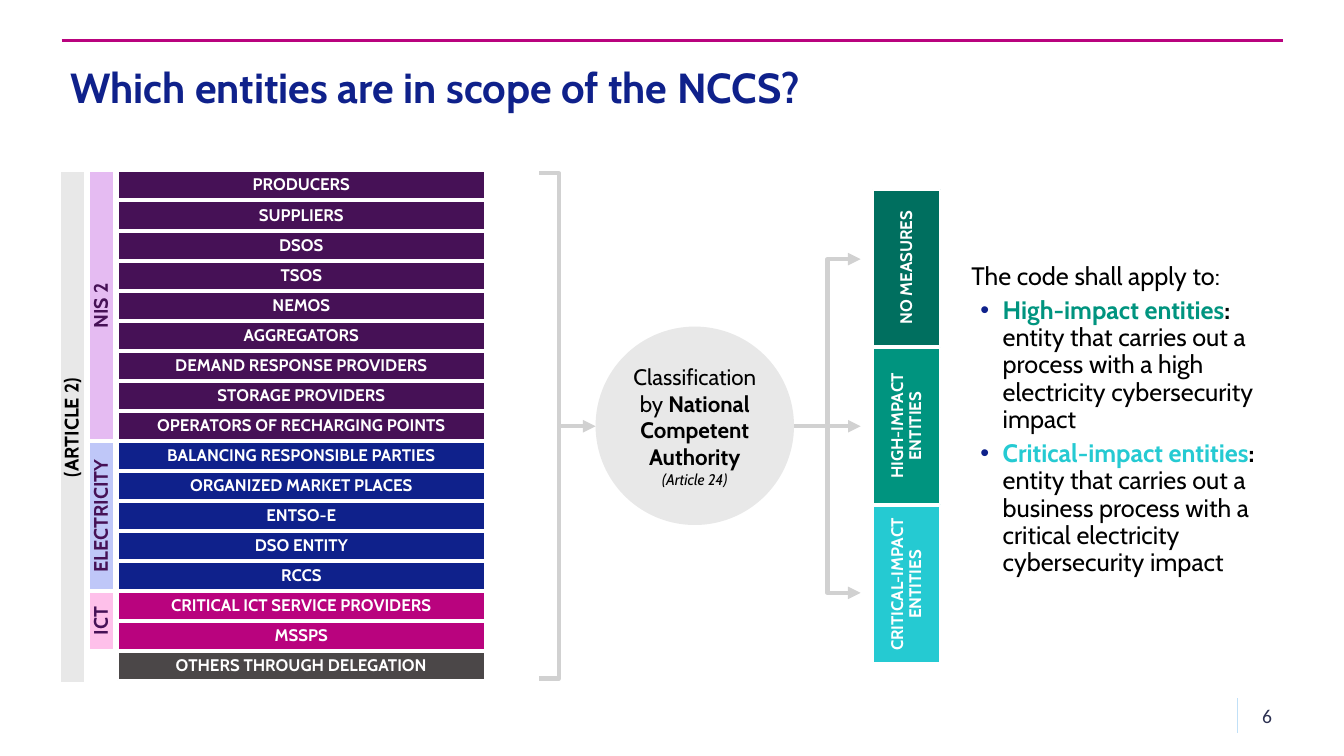
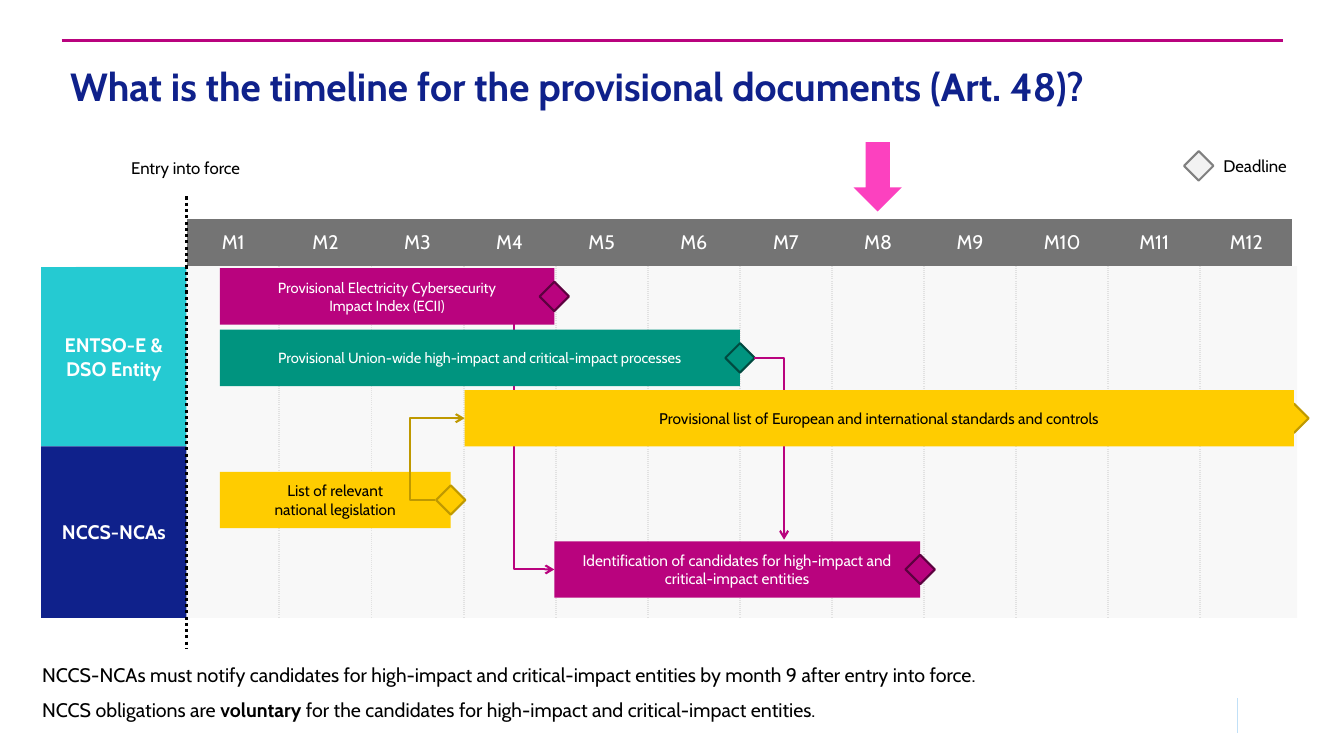
import pptx
import pptx.dml.color
import pptx.enum.dml
import pptx.enum.shapes
import pptx.enum.text
import pptx.oxml.ns
import pptx.util
from lxml import etree

FONT = "Cabin"
COLORS = {
    "white": "FFFFFF", "black": "000000", "navy": "0F218B", "magenta": "B9037E",
    "purple": "461156", "charcoal": "4B4748", "lilac": "E5BBF2", "periwinkle": "BFC7F8",
    "rose": "FEC0EA", "light": "E8E8E8", "silver": "D1D1D1", "forest": "006F5F",
    "green": "00947F", "cyan": "25CAD2", "sky": "C1E0F7", "ink": "2C3051",
    "header": "747474", "panel": "F2F2F2", "yellow": "FFCC00", "gold": "BF9900",
    "wine": "5C013F", "pine": "004A40", "gray": "808080", "pink": "FC41BF",
}
SHAPE = pptx.enum.shapes.MSO_SHAPE
CONNECTOR = pptx.enum.shapes.MSO_CONNECTOR
ALIGN = pptx.enum.text.PP_ALIGN
ANCHOR = pptx.enum.text.MSO_ANCHOR
DOTTED = pptx.enum.dml.MSO_LINE.ROUND_DOT
qn = pptx.oxml.ns.qn

ENTITY_GROUPS = [
    ("NIS 2", "lilac", "purple", [
        "PRODUCERS", "SUPPLIERS", "DSOS", "TSOS", "NEMOS", "AGGREGATORS",
        "DEMAND RESPONSE PROVIDERS", "STORAGE PROVIDERS", "OPERATORS OF RECHARGING POINTS"]),
    ("ELECTRICITY", "periwinkle", "navy", [
        "BALANCING RESPONSIBLE PARTIES", "ORGANIZED MARKET PLACES", "ENTSO-E",
        "DSO ENTITY", "RCCS"]),
    ("ICT", "rose", "magenta", ["CRITICAL ICT SERVICE PROVIDERS", "MSSPS"]),
    (None, None, "charcoal", ["OTHERS THROUGH DELEGATION"]),
]
OUTCOMES = [("NO MEASURES", "forest"), ("HIGH-IMPACT ENTITIES", "green"),
            ("CRITICAL-IMPACT ENTITIES", "cyan")]
BAR_HEIGHT = 1.42
BARS = [
    (5.54, 6.76, 8.43, "magenta", "wine", "white", 10.5,
     [["Provisional Electricity Cybersecurity"], ["Impact Index (ECII)"]]),
    (5.54, 8.31, 13.11, "green", "pine", "white", 10.5,
     [["Provisional Union-wide high-impact and critical-impact processes"]]),
    (13.97, 13.64, 9.22, "magenta", "wine", "white", 11,
     [["Identification of candidates for high-impact and critical-impact entities"]]),
    (5.54, 11.89, 5.82, "yellow", "gold", "black", 11,
     [["List of relevant"], ["national legislation"]]),
    (11.71, 9.83, 20.9, "yellow", "gold", "black", 11,
     [["Provisional list of European and international standards and controls"]]),
]


def rgb(name):
    return pptx.dml.color.RGBColor.from_string(COLORS[name])


def cm(*lengths):
    return [pptx.util.Cm(length) for length in lengths]


def write(shape, paragraphs, size, color="black", align=ALIGN.LEFT, anchor=ANCHOR.TOP,
          bold=False, inset=None, spacing=1.0, before=0, vertical=False, wrap=True, font=FONT):
    frame = shape.text_frame
    frame.word_wrap = wrap
    frame.vertical_anchor = anchor
    if inset is not None:
        frame.margin_left = frame.margin_right = pptx.util.Cm(inset)
        frame.margin_top = frame.margin_bottom = pptx.util.Cm(inset)
    if vertical:
        frame._txBody.bodyPr.set("vert", "vert270")
    for index, runs in enumerate(paragraphs):
        para = frame.add_paragraph() if index else frame.paragraphs[0]
        para.alignment = align
        para.line_spacing = spacing
        para.space_before = pptx.util.Pt(before if index else 0)
        for run in runs:
            text, changes = (run, {}) if isinstance(run, str) else run
            if text == "\n":
                para.add_line_break()
                continue
            span = para.add_run()
            span.text = text
            span.font.name = font
            span.font.size = pptx.util.Pt(changes.get("size", size))
            span.font.bold = changes.get("bold", bold)
            span.font.italic = changes.get("italic", False)
            span.font.color.rgb = rgb(changes.get("color", color))
    return frame


def add_text(page, place, paragraphs, size, **style):
    box = page.shapes.add_textbox(*cm(*place))
    return write(box, paragraphs, size, **style)


def add_box(page, kind, place, fill=None, line=None, width=1.5):
    shape = page.shapes.add_shape(kind, *cm(*place))
    shape.shadow.inherit = False
    if fill:
        shape.fill.solid()
        shape.fill.fore_color.rgb = rgb(fill)
    else:
        shape.fill.background()
    if line:
        shape.line.color.rgb = rgb(line)
        shape.line.width = pptx.util.Pt(width)
    else:
        shape.line.fill.background()
    return shape


def add_label(page, place, text, fill, size, color="white", vertical=False):
    box = add_box(page, SHAPE.RECTANGLE, place, fill, "white")
    write(box, [[text]], size, color, ALIGN.CENTER, ANCHOR.MIDDLE, True,
          inset=0.16, spacing=0.9, vertical=vertical)


def add_line_end(shape, end, kind):
    etree.SubElement(shape.element.spPr.find(qn("a:ln")), qn(f"a:{end}"), type=kind)


def add_line(page, ends, color, width, arrow=None, kind=CONNECTOR.STRAIGHT, dash=None):
    line = page.shapes.add_connector(kind, *cm(*ends))
    line.line.color.rgb = rgb(color)
    line.line.width = pptx.util.Pt(width)
    if dash:
        line.line.dash_style = dash
    if arrow:
        add_line_end(line, "tailEnd", arrow)
    etree.SubElement(line.element.spPr, qn("a:effectLst"))
    return line


def add_elbow(page, ends, color, via=None):
    line = add_line(page, ends, color, 1.5, "arrow", CONNECTOR.ELBOW)
    geometry = line.element.spPr.find(qn("a:prstGeom"))
    if via is None:
        geometry.set("prst", "bentConnector2")
        return
    guides = geometry.find(qn("a:avLst"))
    if guides is None:
        guides = etree.SubElement(geometry, qn("a:avLst"))
    share = round((via - ends[0]) / (ends[2] - ends[0]) * 100000)
    etree.SubElement(guides, qn("a:gd"), name="adj1", fmla=f"val {share}")


def add_bracket(page, place):
    bracket = add_box(page, SHAPE.RIGHT_BRACE, place, None, "silver", 3)
    bracket.adjustments[0] = 0
    bracket.adjustments[1] = 0.5
    return bracket


def add_bullet(para):
    properties = para._p.get_or_add_pPr()
    properties.set("marL", str(pptx.util.Cm(0.79)))
    properties.set("indent", str(pptx.util.Cm(-0.56)))
    tint = etree.SubElement(properties, qn("a:buClr"))
    etree.SubElement(tint, qn("a:srgbClr"), val=COLORS["navy"])
    etree.SubElement(properties, qn("a:buFont"), typeface="Arial")
    etree.SubElement(properties, qn("a:buChar"), char="•")


def add_page(deck, title, size):
    page = deck.slides.add_slide(deck.slide_layouts[6])
    add_line(page, (31.19, 17.6, 31.19, 18.47), "sky", 1)
    add_line(page, (1.55, 1.02, 32.33, 1.02), "magenta", 1.5)
    add_text(page, (1.52, 1.57, 30.81, 2.26), [[title]], size, color="navy",
             bold=True, spacing=0.9)
    return page


def add_entities(page):
    top, step = 4.32, 12.11 / 16
    add_label(page, (1.5, top, 0.64, 12.9), "(ARTICLE 2)", "light", 14, "black", True)
    for group, tint, fill, names in ENTITY_GROUPS:
        if group:
            add_label(page, (2.24, top, 0.64, len(names) * step - 0.05), group, tint, 14,
                      "purple", True)
        for name in names:
            add_label(page, (2.97, top, 9.25, 0.71), name, fill, 12)
            top += step


def add_scope_page(deck):
    page = add_page(deck, "Which entities are in scope of the NCCS?", 30)
    entity = "entity that carries out a "
    points = [
        ("High-impact entities", "green",
         entity + "process with a high electricity cybersecurity impact"),
        ("Critical-impact entities", "cyan",
         entity + "business process with a critical electricity cybersecurity impact"),
    ]
    paragraphs = [["The code shall apply to:"]]
    for name, color, meaning in points:
        paragraphs.append([(name, {"color": color, "bold": True}), (":", {"bold": True}),
                           "\n", meaning])
    frame = add_text(page, (24.23, 4.42, 8.28, 12.34), paragraphs, 18, anchor=ANCHOR.MIDDLE,
                     spacing=0.9, before=5)
    for para in frame.paragraphs[1:]:
        add_bullet(para)

    add_entities(page)
    add_bracket(page, (13.59, 4.37, 0.99, 12.73))
    for start, end in ((14.3, 15.01), (20.24, 21.69)):
        add_line(page, (start, 10.74, end, 10.74), "silver", 3, "triangle")
    fork = add_bracket(page, (20.02, 6.53, 1.67, 8.41))
    fork.element.spPr.find(qn("a:xfrm")).set("flipH", "1")
    for end in ("headEnd", "tailEnd"):
        add_line_end(fork, end, "triangle")

    circle = add_box(page, SHAPE.OVAL, (15.01, 8.23, 5, 5), "light")
    strong = {"bold": True}
    write(circle, [["Classification"], ["by ", ("National", strong)], [("Competent", strong)],
                   [("Authority", strong)], [("(Article 24)", {"size": 11, "italic": True})]],
          16, align=ALIGN.CENTER, anchor=ANCHOR.MIDDLE, wrap=False)
    for index, (name, fill) in enumerate(OUTCOMES):
        add_label(page, (22, 4.78 + 3.99 * index, 1.7, 3.94), name, fill, 12, vertical=True)
    add_text(page, (31.19, 17.53, 1.12, 1.02), [["6"]], 14, color="ink", align=ALIGN.RIGHT,
             anchor=ANCHOR.MIDDLE, font="Calibri")


def add_cell_border(cell, side):
    border = etree.SubElement(cell._tc.get_or_add_tcPr(), qn(f"a:{side}"),
                              w=str(pptx.util.Pt(1.5)))
    fill = etree.SubElement(border, qn("a:solidFill"))
    etree.SubElement(fill, qn("a:srgbClr"), val=COLORS["silver"])
    etree.SubElement(border, qn("a:prstDash"), val="sysDot")


def add_months(page, count=12):
    table = page.shapes.add_table(2, count, *cm(4.72, 5.51, 27.86, 10.06)).table
    table.first_row = table.horz_banding = False
    style = table._tbl.tblPr.find(qn("a:tableStyleId"))
    style.text = "{2D5ABB26-0587-4C30-8999-92F81FD0307C}"
    table.rows[0].height, table.rows[1].height = cm(1.19, 8.87)
    for index in range(count):
        month, body = table.cell(0, index), table.cell(1, index)
        month.fill.solid()
        month.fill.fore_color.rgb = rgb("header")
        month.vertical_anchor = ANCHOR.MIDDLE
        para = month.text_frame.paragraphs[0]
        para.alignment = ALIGN.CENTER
        span = para.add_run()
        span.text = f"M{index + 1}"
        span.font.name = FONT
        span.font.size = pptx.util.Pt(14)
        span.font.color.rgb = rgb("white")
        if index > 0:
            add_cell_border(body, "lnL")
        if index < count - 1:
            add_cell_border(body, "lnR")
        body.fill.background()


def add_block(page, place, fill, paragraphs, size, color="white", bold=False):
    box = add_box(page, SHAPE.RECTANGLE, place, fill)
    write(box, paragraphs, size, color, ALIGN.CENTER, ANCHOR.MIDDLE, bold)
    return box


def add_bar(page, left, top, width, fill, edge, color, size, paragraphs):
    add_block(page, (left, top, width, BAR_HEIGHT), fill, paragraphs, size, color)


def add_deadline(page, x, y, fill, edge, side=0.74):
    add_box(page, SHAPE.DIAMOND, (x - side / 2, y - side / 2, side, side), fill, edge)


def add_timeline_page(deck):
    page = add_page(deck, "What is the timeline for the provisional documents (Art. 48)?", 28)
    add_months(page)
    panel = add_box(page, SHAPE.RECTANGLE, (1.91, 6.71, 30.78, 8.86), "panel")
    tint = panel.element.spPr.find(qn("a:solidFill")).find(qn("a:srgbClr"))
    etree.SubElement(tint, qn("a:alpha"), val="50000")

    add_elbow(page, (13.59, 7.47, 13.97, 14.35), "magenta", 12.95)
    add_block(page, (1.04, 6.73, 3.66, 4.52), "cyan", [["ENTSO-E &"], ["DSO Entity"]], 14,
              bold=True)
    add_block(page, (1.04, 11.25, 3.66, 4.32), "navy", [["NCCS-NCAs"]], 14, bold=True)
    for bar in BARS[:-1]:
        add_bar(page, *bar)
    add_elbow(page, (10.97, 12.6, 11.71, 10.54), "gold", 10.34)
    for left, top, width, fill, edge, *_ in BARS:
        add_deadline(page, left + width, top + BAR_HEIGHT / 2, fill, edge)
    add_elbow(page, (19, 9.02, 19.76, 13.6), "magenta")
    add_bar(page, *BARS[-1])

    add_text(page, (2.29, 3.84, 4.78, 0.76), [["Entry into force"]], 12, align=ALIGN.CENTER)
    add_line(page, (4.7, 4.95, 4.7, 16.33), "black", 2.25, dash=DOTTED)
    add_deadline(page, 30.21, 4.18, "panel", "gray")
    add_text(page, (30.58, 3.8, 3.05, 0.86), [["Deadline"]], 12)
    add_box(page, SHAPE.DOWN_ARROW, (21.51, 3.58, 1.22, 1.75), "pink")
    add_text(page, (0.81, 16.64, 25.12, 1.85), [
        ["NCCS-NCAs must notify candidates for high-impact and critical-impact entities "
         "by month 9 after entry into force."],
        ["NCCS obligations are ", ("voluntary", {"bold": True}),
         " for the candidates for high-impact and critical-impact entities."],
    ], 14, spacing=0.9, before=10)


def main():
    deck = pptx.Presentation()
    deck.slide_width, deck.slide_height = cm(33.87, 19.05)
    add_scope_page(deck)
    add_timeline_page(deck)
    deck.save("out.pptx")


if __name__ == "__main__":
    main()
